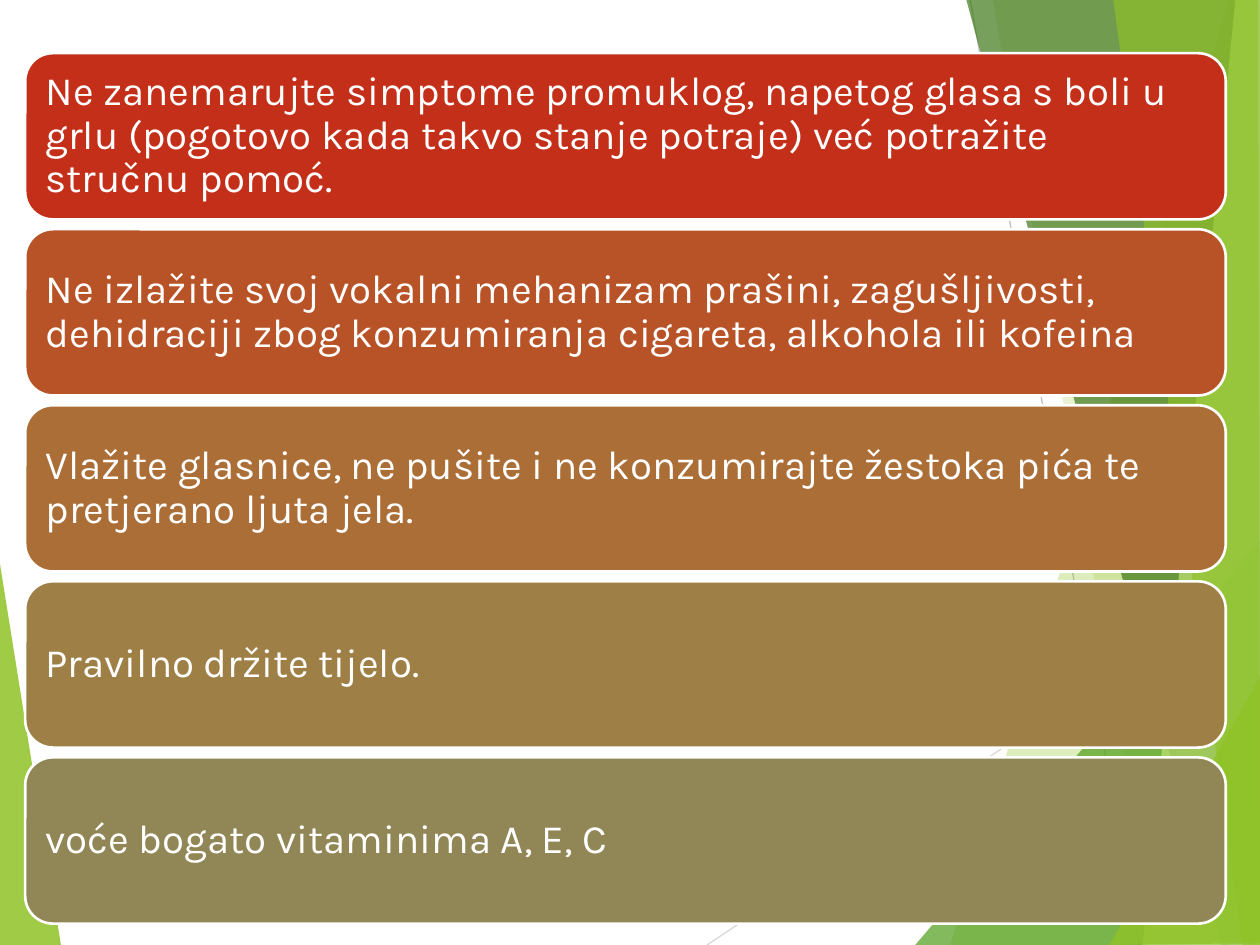
from lxml.etree import SubElement
from pptx import Presentation
from pptx.dml.color import RGBColor
from pptx.enum.shapes import MSO_CONNECTOR as Connector, MSO_SHAPE as Shape
from pptx.enum.text import MSO_ANCHOR as Anchor, PP_ALIGN as Align
from pptx.oxml.ns import qn
from pptx.util import Pt

WHITE = RGBColor(0xFF, 0xFF, 0xFF)
LIGHT_GRAY = RGBColor(0xD9, 0xD9, 0xD9)
MID_GRAY = RGBColor(0xBF, 0xBF, 0xBF)
LEAF = RGBColor(0x90, 0xC2, 0x26)
GRASS = RGBColor(0x54, 0xA0, 0x21)
FOREST = RGBColor(0x3F, 0x78, 0x19)
LIME = RGBColor(0xC0, 0xE4, 0x74)
RED = RGBColor(0xC4, 0x2F, 0x1A)
RUST = RGBColor(0xB8, 0x53, 0x28)
COPPER = RGBColor(0xAB, 0x6E, 0x37)
OCHRE = RGBColor(0x9E, 0x7F, 0x46)
OLIVE = RGBColor(0x91, 0x86, 0x55)

WIDTH, HEIGHT = 720, 540
EDGE = 720.7
CARD_LEFT, CARD_TOP = 14.4, 30.4
CARD_WIDTH, CARD_HEIGHT, CARD_PITCH = 686, 95, 100.6

LEFT_FACET = ([(-0.7, 316), (35.3, 540.7), (-0.7, 540)], LEAF, 85)
RAYS = [
    ((404, 540), (EDGE, 329), LIGHT_GRAY),
    ((554.4, 0), (651, 540), MID_GRAY),
]
RIGHT_FACETS = [
    ([(702, 0), (543, 540), (721.4, 540.7), (EDGE, 0.7)], LEAF, 30),
    ([(567.4, -0.7), (661.7, 540), (EDGE, 540), (EDGE, -0.7)], LEAF, 20),
    ([(522.7, 540), (720, 309), (EDGE, 540)], GRASS, 72),
    ([(552.2, -0.7), (698.4, 540), (EDGE, 539.3), (EDGE, -0.7)], FOREST, 70),
    ([(706.3, -0.7), (653, 540), (EDGE, 540), (720, -0.7)], LIME, 70),
    ([(635.8, -0.7), (710, 540), (720, 540), (718.6, -0.7)], LEAF, 65),
    ([(634.3, 540), (EDGE, 385.2), (EDGE, 539.3)], LEAF, 80),
]
ADVICE = [
    ("Ne zanemarujte simptome promuklog, napetog glasa s boli u grlu "
     "(pogotovo kada takvo stanje potraje) već potražite stručnu pomoć.", RED),
    ("Ne izlažite svoj vokalni mehanizam prašini, zagušljivosti, "
     "dehidraciji zbog konzumiranja cigareta, alkohola ili kofeina", RUST),
    ("Vlažite glasnice, ne pušite i ne konzumirajte žestoka pića te "
     "pretjerano ljuta jela.", COPPER),
    ("Pravilno držite tijelo.", OCHRE),
    ("voće bogato vitaminima A, E, C", OLIVE),
]

FRAME_FORMAT = {
    "word_wrap": True, "vertical_anchor": Anchor.MIDDLE,
    "margin_left": Pt(7.2), "margin_right": Pt(7.2),
    "margin_top": Pt(7.2), "margin_bottom": Pt(7.2),
}
PARAGRAPH_FORMAT = {"alignment": Align.LEFT, "line_spacing": 0.9}
FONT_FORMAT = {"name": "Karla", "size": Pt(23)}


def apply_format(target, values):
    for attribute, value in values.items():
        setattr(target, attribute, value)


def fill_solid(shape, color):
    shape.shadow.inherit = False
    shape.fill.solid()
    shape.fill.fore_color.rgb = color


def add_facet(slide, corners, color, opacity):
    builder = slide.shapes.build_freeform(*corners[0], scale=Pt(1))
    builder.add_line_segments(corners[1:], close=True)
    facet = builder.convert_to_shape()
    fill_solid(facet, color)
    facet.line.fill.background()
    tint = next(facet.element.spPr.iter(qn("a:srgbClr")))
    SubElement(tint, qn("a:alpha"), val=str(opacity * 1000))


def add_ray(slide, start, end, color):
    ends = [Pt(length) for length in (*start, *end)]
    ray = slide.shapes.add_connector(Connector.STRAIGHT, *ends)
    ray.line.color.rgb = color
    ray.line.width = Pt(0.75)
    SubElement(ray.element.spPr, qn("a:effectLst"))


def add_card(slide, top, advice, color):
    card = slide.shapes.add_shape(
        Shape.ROUNDED_RECTANGLE,
        Pt(CARD_LEFT), Pt(top), Pt(CARD_WIDTH), Pt(CARD_HEIGHT))
    fill_solid(card, color)
    card.line.color.rgb = WHITE
    card.line.width = Pt(1.5)
    apply_format(card.text_frame, FRAME_FORMAT)
    paragraph = card.text_frame.paragraphs[0]
    apply_format(paragraph, PARAGRAPH_FORMAT)
    run = paragraph.add_run()
    run.text = advice
    apply_format(run.font, FONT_FORMAT)
    run.font.color.rgb = WHITE


def main():
    deck = Presentation()
    deck.slide_width, deck.slide_height = Pt(WIDTH), Pt(HEIGHT)
    slide = deck.slides.add_slide(deck.slide_layouts[6])
    add_facet(slide, *LEFT_FACET)
    for ray in RAYS:
        add_ray(slide, *ray)
    for facet in RIGHT_FACETS:
        add_facet(slide, *facet)
    for row, (advice, color) in enumerate(ADVICE):
        add_card(slide, CARD_TOP + row * CARD_PITCH, advice, color)
    deck.save("out.pptx")


if __name__ == "__main__":
    main()
